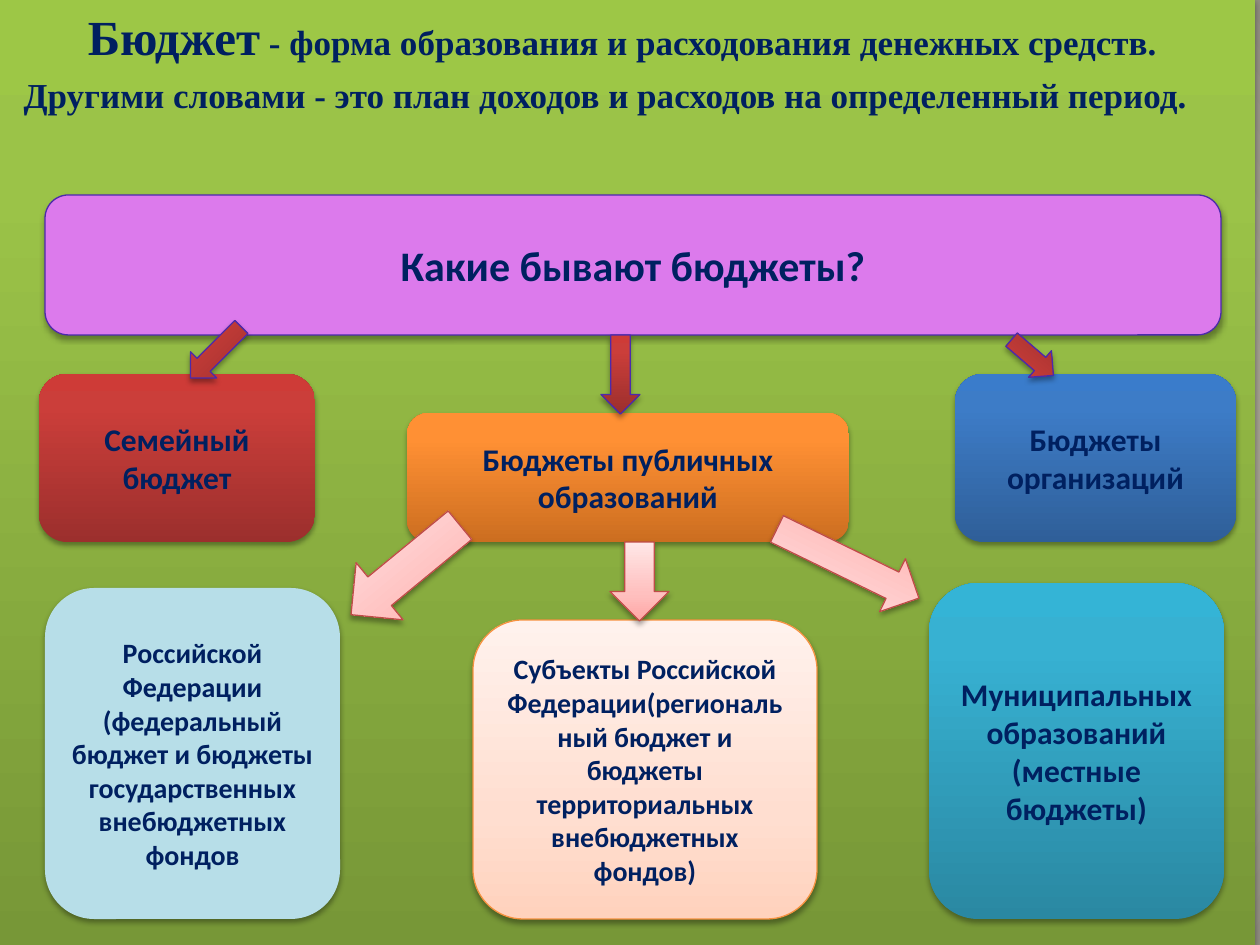
from lxml.etree import SubElement
from pptx import Presentation
from pptx.dml.color import RGBColor
from pptx.enum.shapes import MSO_SHAPE as Shape
from pptx.enum.text import MSO_ANCHOR as Anchor, MSO_AUTO_SIZE as AutoSize, PP_ALIGN as Align
from pptx.oxml.ns import qn
from pptx.util import Pt

PX = 914400 / 126
NAVY = "002060"
# Gradient stops: position in percent, colour; they run from bottom to top
GREEN = [(0, "779737"), (80, "9BC348"), (100, "9DC746")]
RED = [(0, "9C2F2D"), (80, "CB3E3A"), (100, "CE3B37")]
ORANGE = [(0, "CC6E20"), (80, "FF9034"), (100, "FF9136")]
BLUE = [(0, "2F5F99"), (80, "3D7CC7"), (100, "3A7CCB")]
TEAL = [(0, "2A88A2"), (80, "37B1D2"), (100, "34B4D6")]
PEACH = [(0, "FFD2BD"), (35, "FFDED0"), (100, "FFF2ED")]
PINK = [(0, "FFA6A5"), (35, "FFC0BF"), (100, "FFE7E7")]


def px(value):
    return round(value * PX)


def color(value):
    return RGBColor.from_string(value)


def place(shape, box):
    shape.left, shape.top, shape.width, shape.height = map(px, box)


def set_gradient(fill, parent, stops):
    fill.gradient()
    fill.gradient_angle = 90
    gradient = parent.find(qn("a:gradFill"))
    stop_list = gradient.find(qn("a:gsLst"))
    stop_list.clear()
    for position, value in stops:
        stop = SubElement(stop_list, qn("a:gs"), pos=str(position * 1000))
        SubElement(stop, qn("a:srgbClr"), val=value)
    return gradient


def add_shadow(shape):
    shape.shadow.inherit = False
    effects = shape.element.spPr.find(qn("a:effectLst"))
    shadow = SubElement(effects, qn("a:outerShdw"), blurRad=str(Pt(3.1)),
                        dist=str(Pt(1.8)), dir="5400000", rotWithShape="0")
    black = SubElement(shadow, qn("a:srgbClr"), val="000000")
    SubElement(black, qn("a:alpha"), val="35000")


def style(shape, paint, line=None):
    if isinstance(paint, str):
        shape.fill.solid()
        shape.fill.fore_color.rgb = color(paint)
    else:
        set_gradient(shape.fill, shape.element.spPr, paint)
    if line:
        shape.line.color.rgb = color(line)
        shape.line.width = Pt(0.75)
    else:
        shape.line.fill.background()
    add_shadow(shape)


def format_font(font, name, size):
    font.name, font.size, font.bold = name, Pt(size), True
    font.color.rgb = color(NAVY)


def set_background(page):
    fill = page.background.fill
    parent = page.element.find(".//" + qn("p:bgPr"))
    gradient = set_gradient(fill, parent, [(0, "FCF7DD"), (100, "918E81")])
    gradient.remove(gradient.find(qn("a:lin")))
    circle = SubElement(gradient, qn("a:path"), path="circle")
    SubElement(circle, qn("a:fillToRect"), l="50000", t="50000", r="50000", b="50000")


def add_heading_panel(page, box):
    title = page.shapes.title
    place(title, box)
    style(title, GREEN)
    frame = title.text_frame
    frame.word_wrap = True
    frame.auto_size = AutoSize.NONE
    frame.vertical_anchor = Anchor.TOP
    lines = [
        (["Бюджет", " - форма образования и расходования денежных средств."], 10),
        (["Другими словами - это план доходов и расходов на определенный период."], 44),
    ]
    for index, (texts, right_indent) in enumerate(lines):
        para = frame.add_paragraph() if index else frame.paragraphs[0]
        para.alignment = Align.CENTER
        para.space_before = Pt(5)
        para._p.get_or_add_pPr().set("marR", str(px(right_indent)))
        format_font(para.font, "Times New Roman", 20)
        for text in texts:
            span = para.add_run()
            span.text = text
            format_font(span.font, "Times New Roman", 28 if text == "Бюджет" else 20)


def add_card(page, box, text, size, paint, line=None):
    card = page.shapes.add_shape(Shape.ROUNDED_RECTANGLE, *map(px, box))
    style(card, paint, line)
    frame = card.text_frame
    frame.word_wrap = True
    frame.vertical_anchor = Anchor.MIDDLE
    frame.text = text
    for para in frame.paragraphs:
        para.alignment = Align.CENTER
        format_font(para.font, "Calibri", size)


def add_arrow(page, kind, box, rotation, paint, line):
    arrow = page.shapes.add_shape(kind, *map(px, box))
    arrow.rotation = rotation
    style(arrow, paint, line)


def add_budget_tree(page):
    # Question, kinds of budget, levels of public budget
    cards = [
        ((45, 195, 1176, 140), "Какие бывают бюджеты?", 24, "DC7AEC", "4C2AAC"),
        ((39, 374, 276, 168), "Семейный бюджет", 18, RED),
        ((407, 413, 442, 129), "Бюджеты публичных образований", 18, ORANGE),
        ((955, 374, 281, 168), "Бюджеты организаций", 18, BLUE),
        ((45, 588, 295, 331), "Российской Федерации (федеральный бюджет и бюджеты "
         "государственных внебюджетных фондов", 16, "B7DEE8"),
        ((473, 620, 344, 299), "Субъекты Российской Федерации(региональный бюджет и "
         "бюджеты территориальных внебюджетных фондов)", 16, PEACH, "F69240"),
        ((929, 583, 295, 336), "Муниципальных образований\n(местные бюджеты)", 18, TEAL),
    ]
    for card in cards:
        add_card(page, *card)

    # Arrows from each parent down to its three children
    arrow_rows = [
        (RED, "4C2AAC", [(Shape.LEFT_ARROW, (180, 334, 72, 37), 315),
                         (Shape.DOWN_ARROW, (601, 335, 39, 79), 0),
                         (Shape.LEFT_ARROW, (1005, 340, 55, 35), 220.6)]),
        (PINK, "BF4C48", [(Shape.LEFT_ARROW, (335, 533, 141, 74), 320.6),
                          (Shape.DOWN_ARROW, (610, 542, 59, 79), 0),
                          (Shape.LEFT_ARROW, (769, 534, 158, 59), 206)]),
    ]
    for paint, line, arrows in arrow_rows:
        for kind, box, rotation in arrows:
            add_arrow(page, kind, box, rotation, paint, line)


def main():
    deck = Presentation()
    deck.slide_width, deck.slide_height = px(1260), px(945)
    page = deck.slides.add_slide(deck.slide_layouts[5])
    set_background(page)
    add_heading_panel(page, (0, 0, 1255, 945))
    add_budget_tree(page)
    deck.save("out.pptx")


if __name__ == "__main__":
    main()
